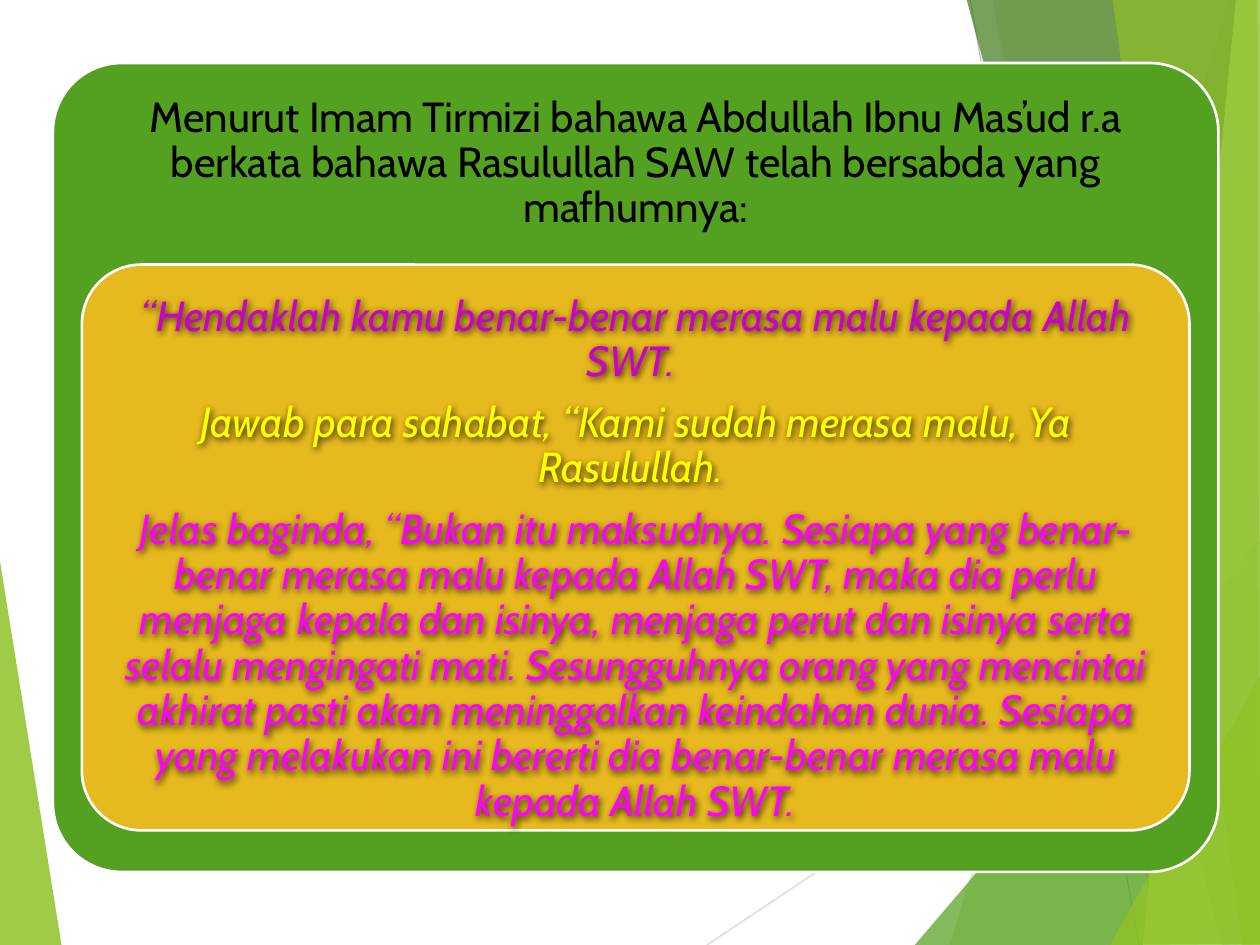
from lxml.etree import SubElement
from pptx import Presentation
from pptx.dml.color import RGBColor
from pptx.enum.shapes import MSO_CONNECTOR, MSO_SHAPE
from pptx.enum.text import MSO_ANCHOR, PP_ALIGN
from pptx.oxml.ns import qn
from pptx.util import Inches, Pt

COLORS = {
    "lime": "90C226", "green": "54A021", "forest": "3F7819", "pale": "C0E474",
    "gold": "E6B91E", "white": "FFFFFF", "black": "000000",
    "purple": "CC00CC", "yellow": "FFFF00", "magenta": "FF00FF",
    "light gray": "D9D9D9", "gray": "BFBFBF",
}

# Colour, opacity in percent, corner points
LEFT_FACET = ("lime", 85, [(-0.01, 4.39), (0.49, 7.51), (-0.01, 7.5)])
RIGHT_FACETS = [
    ("lime", 30, [(9.75, 0), (7.54, 7.5), (10.02, 7.51), (10.01, 0.01)]),
    ("lime", 20, [(7.88, -0.01), (9.19, 7.5), (10.01, 7.5), (10.01, -0.01)]),
    ("green", 72, [(7.26, 7.5), (10, 4.29), (10.01, 7.5)]),
    ("forest", 70, [(7.67, -0.01), (9.7, 7.5), (10.01, 7.49), (10.01, -0.01)]),
    ("pale", 70, [(9.81, -0.01), (9.07, 7.5), (10.01, 7.5), (10, -0.01)]),
    ("lime", 65, [(8.83, -0.01), (9.86, 7.5), (10, 7.5), (9.98, -0.01)]),
    ("lime", 80, [(8.81, 7.5), (10.01, 5.35), (10.01, 7.49)]),
]
RAYS = [
    ("light gray", (5.61, 7.5), (10.01, 4.57)),
    ("gray", (7.7, 0), (9.04, 7.5)),
]

HEADING = [
    ("black", "Menurut Imam Tirmizi bahawa Abdullah Ibnu Mas’ud r.a berkata "
     "bahawa Rasulullah SAW telah bersabda yang mafhumnya:"),
]
HADITH = [
    ("purple", "“Hendaklah kamu benar-benar merasa malu kepada Allah SWT. "),
    ("yellow", "Jawab para sahabat, “Kami sudah merasa malu, Ya Rasulullah. "),
    ("magenta", "Jelas baginda, “Bukan itu maksudnya. Sesiapa yang benar-benar "
     "merasa malu kepada Allah SWT, maka dia perlu menjaga kepala dan isinya, "
     "menjaga perut dan isinya serta selalu mengingati mati. Sesungguhnya "
     "orang yang mencintai akhirat pasti akan meninggalkan keindahan dunia. "
     "Sesiapa yang melakukan ini bererti dia benar-benar merasa malu kepada "
     "Allah SWT."),
]


def rgb(name):
    return RGBColor.from_string(COLORS[name])


def add_facet(slide, color, opacity, points):
    corners = [(Inches(x), Inches(y)) for x, y in points]
    builder = slide.shapes.build_freeform(*corners[0], scale=1.0)
    builder.add_line_segments(corners[1:], close=True)
    facet = builder.convert_to_shape()
    facet.shadow.inherit = False
    facet.fill.solid()
    facet.fill.fore_color.rgb = rgb(color)
    facet.line.fill.background()
    tint = facet.fill._xPr.find(".//" + qn("a:srgbClr"))
    SubElement(tint, qn("a:alpha"), val=str(opacity * 1000))


def add_ray(slide, color, start, end):
    ray = slide.shapes.add_connector(
        MSO_CONNECTOR.STRAIGHT, *(Inches(v) for v in start + end))
    ray.line.color.rgb = rgb(color)
    ray.line.width = Pt(0.75)
    SubElement(ray._element.spPr, qn("a:effectLst"))


def add_panel(slide, color, box, rounding):
    panel = slide.shapes.add_shape(
        MSO_SHAPE.ROUNDED_RECTANGLE, *(Inches(v) for v in box))
    panel.adjustments[0] = rounding
    panel.shadow.inherit = False
    panel.fill.solid()
    panel.fill.fore_color.rgb = rgb(color)
    panel.line.color.rgb = rgb("white")
    panel.line.width = Pt(1.5)


def add_text(slide, box, passages, italic=False):
    text_box = slide.shapes.add_textbox(*(Inches(v) for v in box))
    frame = text_box.text_frame
    frame.word_wrap = True
    frame.vertical_anchor = MSO_ANCHOR.TOP
    frame.margin_left = frame.margin_right = Inches(0.1)
    frame.margin_top = frame.margin_bottom = Inches(0.1)
    for index, (color, passage) in enumerate(passages):
        paragraph = frame.add_paragraph() if index else frame.paragraphs[0]
        paragraph.text = passage
        paragraph.alignment = PP_ALIGN.CENTER
        paragraph.line_spacing = 0.9
        paragraph.space_after = Pt(9)
        paragraph.font.name = "Cabin"
        paragraph.font.size = Pt(24)
        paragraph.font.italic = italic
        paragraph.font.color.rgb = rgb(color)
    return text_box


def add_soft_shadow(text_box):
    effects = SubElement(text_box._element.spPr, qn("a:effectLst"))
    shadow = SubElement(effects, qn("a:outerShdw"), blurRad=str(Pt(4)),
                        dist=str(Pt(1.5)), dir="2700000", rotWithShape="0")
    tint = SubElement(shadow, qn("a:srgbClr"), val=COLORS["black"])
    SubElement(tint, qn("a:alpha"), val="80000")


def main():
    deck = Presentation()
    deck.slide_width, deck.slide_height = Inches(10), Inches(7.5)
    slide = deck.slides.add_slide(deck.slide_layouts[6])

    # Faceted background
    add_facet(slide, *LEFT_FACET)
    for ray in RAYS:
        add_ray(slide, *ray)
    for facet in RIGHT_FACETS:
        add_facet(slide, *facet)

    # Outer panel with the heading
    add_panel(slide, "green", (0.42, 0.5, 9.25, 6.42), 0.085)
    add_text(slide, (0.58, 0.66, 8.93, 1.4), HEADING)

    # Inner panel with the hadith
    add_panel(slide, "gold", (0.65, 2.1, 8.79, 4.49), 0.105)
    hadith = add_text(slide, (0.79, 2.24, 8.51, 4.22), HADITH, italic=True)
    add_soft_shadow(hadith)

    deck.save("out.pptx")


if __name__ == "__main__":
    main()
